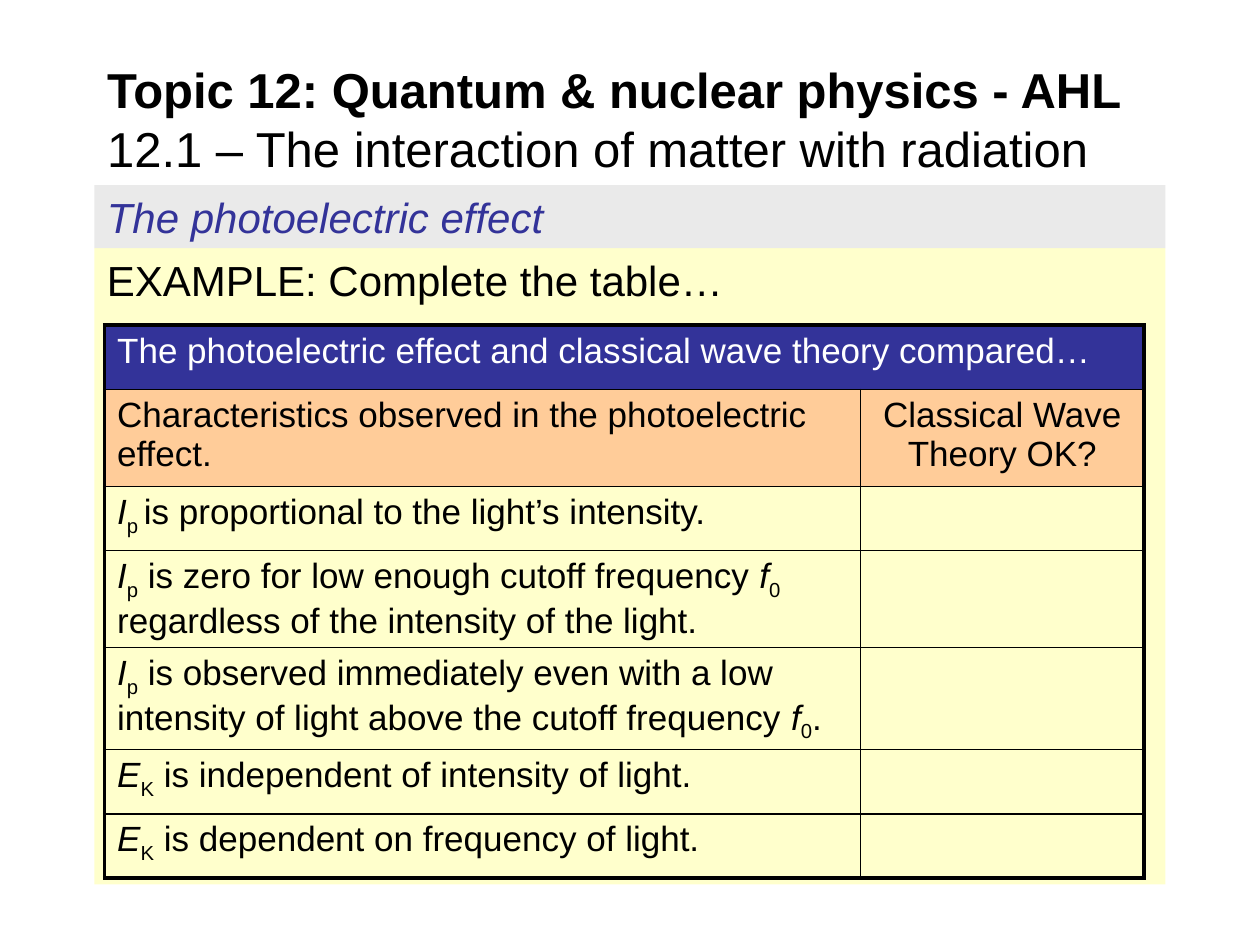
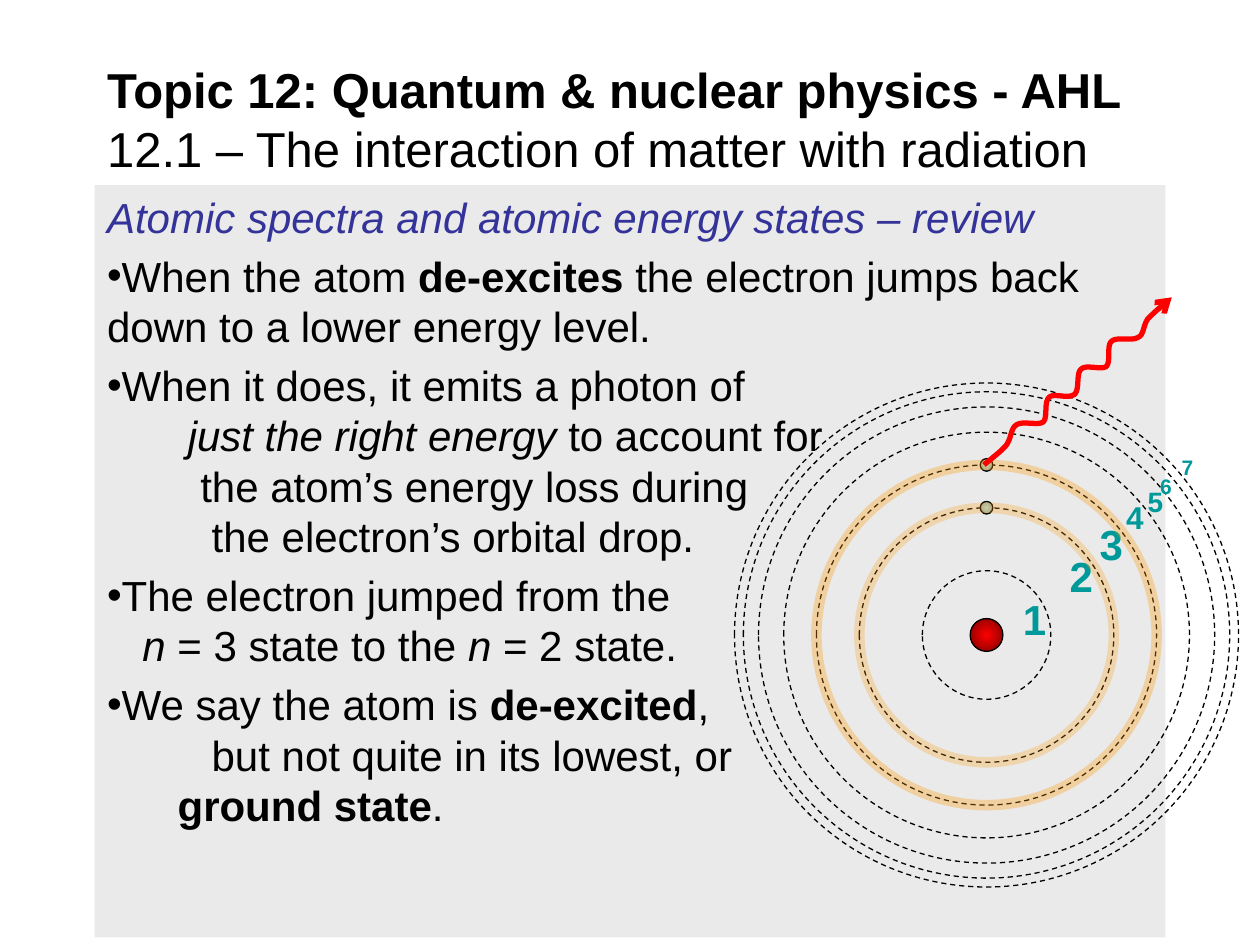
from lxml import etree
from pptx import Presentation
from pptx.dml.color import RGBColor
from pptx.enum.dml import MSO_LINE
from pptx.enum.shapes import MSO_SHAPE
from pptx.enum.text import MSO_ANCHOR, MSO_AUTO_SIZE, PP_ALIGN
from pptx.oxml.ns import qn
from pptx.util import Inches, Pt

RECTANGLE, OVAL = MSO_SHAPE.RECTANGLE, MSO_SHAPE.OVAL
LEFT, CENTER = PP_ALIGN.LEFT, PP_ALIGN.CENTER
DASH = MSO_LINE.DASH
TOP, MIDDLE = MSO_ANCHOR.TOP, MSO_ANCHOR.MIDDLE
NO_AUTOFIT = MSO_AUTO_SIZE.NONE

BLACK = RGBColor(0, 0, 0)
WHITE = RGBColor(255, 255, 255)
NAVY = RGBColor(0x33, 0x33, 0x99)
GRAY = RGBColor(0xEA, 0xEA, 0xEA)
CREAM = RGBColor(0xFF, 0xFF, 0xCC)
PEACH = RGBColor(0xFF, 0xCC, 0x99)
TEAL = RGBColor(0, 0x99, 0x99)
ORANGE = RGBColor(0xFF, 0x99, 0)
RED = RGBColor(0xFF, 0, 0)
DARK_RED = RGBColor(0x76, 0, 0)
ICE = RGBColor(0xBB, 0xE0, 0xE3)
DARK_ICE = RGBColor(0x86, 0xA0, 0xA2)

FONT = "Arial"
TITLE_ONLY, TITLE_AND_BODY = 5, 1
CONTENT_LEFT, CONTENT_TOP, CONTENT_WIDTH = 0.75, 1.47, 8.5
TITLE = [("Topic 12: Quantum & nuclear physics - AHL\v", "b"),
         ("12.1 – The interaction of matter with radiation", "")]

PHOTOCURRENT = [("I", "i"), ("p", "sub")]
KINETIC_ENERGY = [("E", "i"), ("K", "sub")]
CUTOFF = [("f", "i"), ("0", "sub")]
OBSERVATIONS = [
    [("I", "i"), ("p ", "sub"), ("is proportional to the light’s intensity.", "")],
    PHOTOCURRENT + [(" is zero for low enough cutoff frequency ", "")] + CUTOFF
    + [(" regardless of the intensity of the light.", "")],
    PHOTOCURRENT + [(" is observed immediately even with a low intensity of light"
                     " above the cutoff frequency ", "")] + CUTOFF + [(".", "")],
    KINETIC_ENERGY + [(" is independent of intensity of light.", "")],
    KINETIC_ENERGY + [(" is dependent on frequency of light.", "")],
]
ROW_HEIGHTS = [0.51, 0.77, 0.51, 0.77, 0.81, 0.51, 0.51]

# Each line: bulleted or not, left indent, text pieces
REVIEW_LINES = [
    (True, 0, [("When the atom ", ""), ("de-excites", "b"),
               (" the electron jumps back down to a lower energy level.", "")]),
    (True, 0, [("When it does, it emits a photon of", "")]),
    (False, 0.64, [("just the right energy ", "i"), ("to account for", "")]),
    (False, 0.74, [("the atom’s energy loss during", "")]),
    (False, 0.83, [("the electron’s orbital drop.", "")]),
    (True, 0, [("The electron jumped from the", "")]),
    (False, 0.28, [("n", "i"), (" = 3 state to the ", ""), ("n", "i"),
                   (" = 2 state.", "")]),
    (True, 0, [("We say the atom is ", ""), ("de-excited", "b"), (",", "")]),
    (False, 0.83, [("but not quite in its lowest, or", "")]),
    (False, 0.56, [("ground state", "b"), (".", "")]),
]

ATOM_X, ATOM_Y = 7.83, 5.04
ORBIT_RADII = [0.51, 1.01, 1.35, 1.61, 1.81, 1.93, 2.0]
# Label of each orbit: left, top, text size
ORBIT_LABELS = [(8.02, 4.66, 24), (8.39, 4.32, 24), (8.63, 4.07, 24), (8.84, 3.9, 18),
                (9.01, 3.8, 16), (9.11, 3.71, 12), (9.28, 3.56, 12)]
# Cubic curves: a start point, then two control points and an end point for each
PHOTON_WAVE = [
    (7.81, 3.69), (7.88, 3.63), (7.95, 3.58), (7.99, 3.53),
    (8.03, 3.47), (8.02, 3.4), (8.07, 3.37), (8.12, 3.34), (8.24, 3.38), (8.28, 3.35),
    (8.32, 3.31), (8.28, 3.19), (8.33, 3.15), (8.37, 3.12), (8.48, 3.17), (8.53, 3.13),
    (8.57, 3.09), (8.54, 2.96), (8.58, 2.93), (8.62, 2.89), (8.74, 2.94), (8.78, 2.91),
    (8.82, 2.87), (8.78, 2.75), (8.82, 2.71), (8.86, 2.67), (8.98, 2.71), (9.03, 2.68),
    (9.08, 2.66), (9.07, 2.59), (9.11, 2.53), (9.16, 2.48), (9.23, 2.42), (9.3, 2.36),
]
CURVE_STEPS = 8


def write(paragraph, pieces, size, color=BLACK, alignment=LEFT, space=0.2):
    """Fill a paragraph with (text, style) pieces; space is a share of the text size."""
    paragraph.text = ""
    paragraph.alignment = alignment
    paragraph.space_before = Pt(size * space)
    for text, style in pieces:
        before, line_break, _ = text.partition("\v")
        run = paragraph.add_run()
        run.text = before
        font = run.font
        font.name, font.size, font.color.rgb = FONT, Pt(size), color
        font.bold, font.italic = style == "b", style == "i"
        if style == "sub":
            run._r.get_or_add_rPr().set("baseline", "-25000")
        if line_break:
            paragraph.add_line_break()


def place(shape, left, top, width, height):
    shape.left, shape.top = Inches(left), Inches(top)
    shape.width, shape.height = Inches(width), Inches(height)


def set_bullet(paragraph, bulleted, indent):
    properties = paragraph._p.get_or_add_pPr()
    properties.set("marL", str(Inches(indent)))
    properties.set("indent", "0")
    if bulleted:
        etree.SubElement(properties, qn("a:buChar")).set("char", "•")
    else:
        etree.SubElement(properties, qn("a:buNone"))


def add_topic_slide(presentation, layout):
    slide = presentation.slides.add_slide(presentation.slide_layouts[layout])
    title = slide.shapes.title
    place(title, CONTENT_LEFT, 0.45, CONTENT_WIDTH, 0.98)
    frame = title.text_frame
    frame.auto_size, frame.vertical_anchor = NO_AUTOFIT, MIDDLE
    write(frame.paragraphs[0], TITLE, 28, space=0)
    return slide


def add_band(slide, top, height, fill, pieces, color):
    band = slide.shapes.add_shape(RECTANGLE, Inches(CONTENT_LEFT), Inches(top),
                                  Inches(CONTENT_WIDTH), Inches(height))
    band.shadow.inherit = False
    band.fill.solid()
    band.fill.fore_color.rgb = fill
    band.line.fill.background()
    band.text_frame.vertical_anchor = TOP
    write(band.text_frame.paragraphs[0], pieces, 24, color)


def set_borders(cell, widths):
    """Draw black borders; widths are left, right, top, bottom in points."""
    properties = cell._tc.get_or_add_tcPr()
    for index, (side, width) in enumerate(zip("LRTB", widths)):
        border = etree.Element(qn(f"a:ln{side}"), w=str(Pt(width)))
        fill = etree.SubElement(border, qn("a:solidFill"))
        etree.SubElement(fill, qn("a:srgbClr")).set("val", str(BLACK))
        properties.insert(index, border)


def fill_cell(cell, fill, pieces, color=BLACK, alignment=LEFT):
    cell.fill.solid()
    cell.fill.fore_color.rgb = fill
    write(cell.text_frame.paragraphs[0], pieces, 20, color, alignment)


def add_comparison_table(slide):
    row_count = len(ROW_HEIGHTS)
    table = slide.shapes.add_table(row_count, 2, Inches(0.83), Inches(2.58), Inches(8.25),
                                   Inches(sum(ROW_HEIGHTS))).table
    table.first_row = table.horz_banding = False
    for column, width in zip(table.columns, (6, 2.25)):
        column.width = Inches(width)
    for row, height in zip(table.rows, ROW_HEIGHTS):
        row.height = Inches(height)

    table.cell(0, 0).merge(table.cell(0, 1))
    fill_cell(table.cell(0, 0), NAVY,
              [("The photoelectric effect and classical wave theory compared…", "")], WHITE)
    fill_cell(table.cell(0, 1), NAVY, [])
    fill_cell(table.cell(1, 0), PEACH,
              [("Characteristics observed in the photoelectric effect.", "")])
    fill_cell(table.cell(1, 1), PEACH, [("Classical Wave Theory OK?", "")], alignment=CENTER)
    for row, observation in enumerate(OBSERVATIONS, start=2):
        fill_cell(table.cell(row, 0), CREAM, observation)
        fill_cell(table.cell(row, 1), CREAM, [])

    for row in range(row_count):
        for column in range(2):
            outer_sides = (column == 0, column == 1 or row == 0,
                           row == 0, row == row_count - 1)
            set_borders(table.cell(row, column),
                        [2.25 if outer else 1 for outer in outer_sides])


def add_circle(slide, center_x, center_y, radius, color=BLACK, width=0.75):
    circle = slide.shapes.add_shape(OVAL, Inches(center_x - radius), Inches(center_y - radius),
                                    Inches(2 * radius), Inches(2 * radius))
    circle.shadow.inherit = False
    circle.fill.background()
    circle.line.color.rgb, circle.line.width = color, Pt(width)
    return circle


def add_ball(slide, center_x, center_y, radius, inner, outer):
    """Add a circle shaded from its centre to its edge."""
    ball = add_circle(slide, center_x, center_y, radius)
    ball.fill.gradient()
    for stop, color in zip(ball.fill.gradient_stops, (inner, outer)):
        stop.color.rgb = color
    gradient = ball._element.spPr.find(qn("a:gradFill"))
    gradient.remove(gradient.find(qn("a:lin")))
    shading = etree.SubElement(gradient, qn("a:path"))
    shading.set("path", "circle")
    etree.SubElement(shading, qn("a:fillToRect"), l="50000", t="50000", r="50000", b="50000")


def add_glow_ring(slide, radius, opacity):
    ring = add_circle(slide, ATOM_X, ATOM_Y, radius, ORANGE, 6)
    color = ring.line._ln.find(qn("a:solidFill")).find(qn("a:srgbClr"))
    etree.SubElement(color, qn("a:alpha")).set("val", str(opacity * 1000))


def add_orbit_label(slide, number, left, top, size):
    box = slide.shapes.add_textbox(Inches(left), Inches(top), Inches(0.47), Inches(0.4))
    box.text_frame.word_wrap = True
    write(box.text_frame.paragraphs[0], [(str(number), "b")], size, TEAL, space=0.5)


def curve_points(points):
    """Return points along the joined cubic curves, in EMU."""
    result = [tuple(Inches(value) for value in points[0])]
    for start in range(0, len(points) - 1, 3):
        controls = points[start:start + 4]
        for step in range(1, CURVE_STEPS + 1):
            t = step / CURVE_STEPS
            weights = ((1 - t) ** 3, 3 * t * (1 - t) ** 2, 3 * t * t * (1 - t), t ** 3)
            result.append(tuple(
                Inches(sum(weight * point[axis] for weight, point in zip(weights, controls)))
                for axis in range(2)))
    return result


def add_photon(slide):
    first, *rest = curve_points(PHOTON_WAVE)
    builder = slide.shapes.build_freeform(*first)
    builder.add_line_segments(rest, close=False)
    photon = builder.convert_to_shape()
    photon.shadow.inherit = False
    photon.fill.background()
    photon.line.color.rgb, photon.line.width = RED, Pt(3)
    etree.SubElement(photon.line._ln, qn("a:tailEnd")).set("type", "arrow")


def add_review_text(slide):
    body = slide.placeholders[1]
    place(body, CONTENT_LEFT, CONTENT_TOP, CONTENT_WIDTH, 5.97)
    body.fill.solid()
    body.fill.fore_color.rgb = GRAY
    frame = body.text_frame
    frame.auto_size, frame.vertical_anchor = NO_AUTOFIT, TOP
    heading = frame.paragraphs[0]
    write(heading, [("Atomic spectra and atomic energy states – review", "i")], 24, NAVY)
    set_bullet(heading, False, 0)
    for bulleted, indent, pieces in REVIEW_LINES:
        paragraph = frame.add_paragraph()
        write(paragraph, pieces, 24, space=0.2 if bulleted else 0)
        set_bullet(paragraph, bulleted, indent)


def add_atom(slide):
    add_ball(slide, ATOM_X, ATOM_Y, 0.13, RED, DARK_RED)
    for radius in ORBIT_RADII:
        add_circle(slide, ATOM_X, ATOM_Y, radius).line.dash_style = DASH
    for number, label in enumerate(ORBIT_LABELS, start=1):
        add_orbit_label(slide, number, *label)
    for radius, opacity in ((ORBIT_RADII[1], 26), (ORBIT_RADII[2], 31)):
        add_ball(slide, ATOM_X, ATOM_Y - radius, 0.05, ICE, DARK_ICE)
        add_glow_ring(slide, radius, opacity)
    add_photon(slide)


def main():
    presentation = Presentation()
    presentation.slide_width, presentation.slide_height = Inches(10), Inches(7.5)

    slide = add_topic_slide(presentation, TITLE_ONLY)
    add_band(slide, 1.97, 5.05, CREAM, [("EXAMPLE: Complete the table…", "")], BLACK)
    add_band(slide, CONTENT_TOP, 0.5, GRAY, [("The photoelectric effect", "i")], NAVY)
    add_comparison_table(slide)

    slide = add_topic_slide(presentation, TITLE_AND_BODY)
    add_review_text(slide)
    add_atom(slide)

    presentation.save("out.pptx")


if __name__ == "__main__":
    main()
